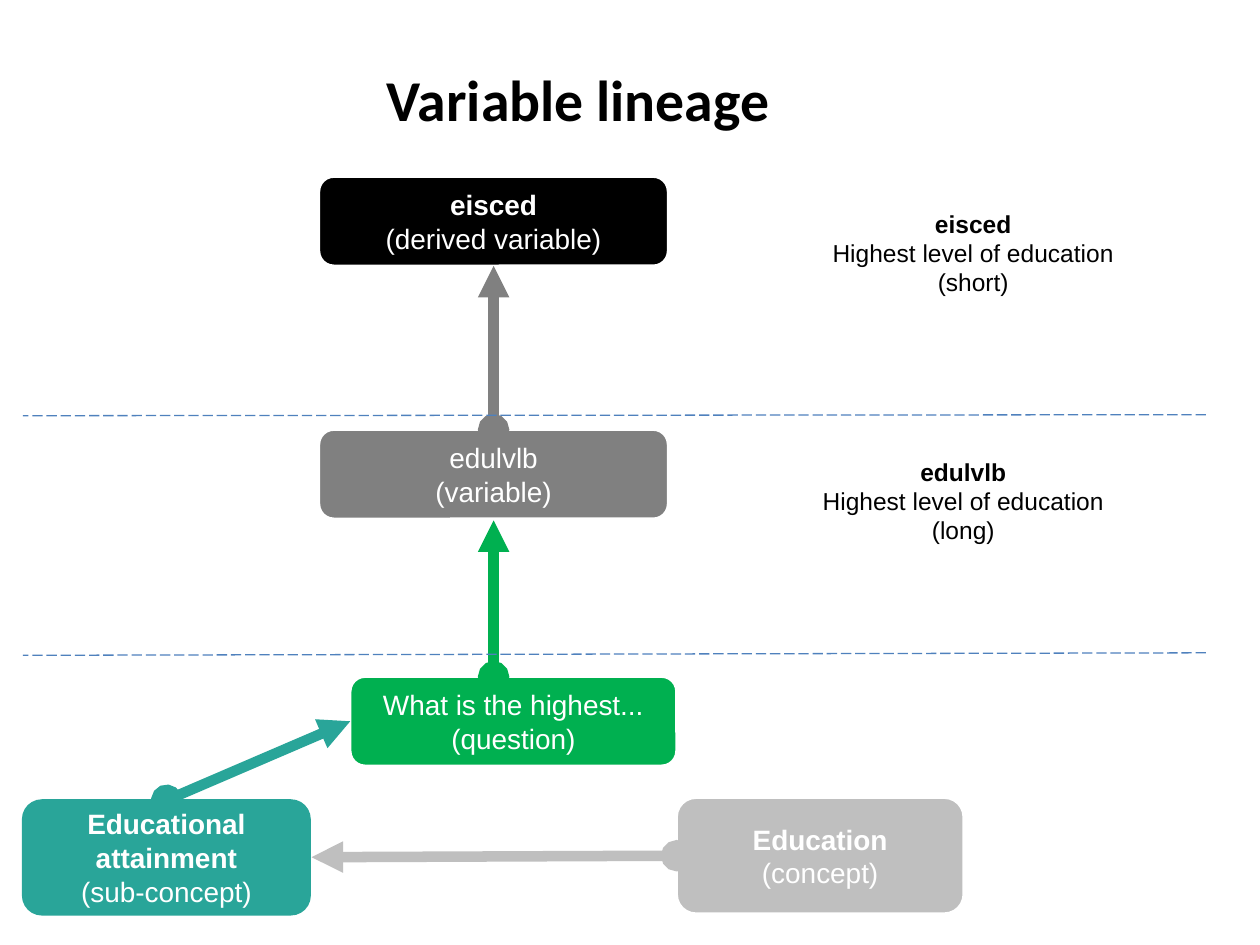
from lxml import etree
from pptx import Presentation, util as u
from pptx.dml.color import RGBColor
from pptx.enum import dml, shapes, text
from pptx.oxml.ns import qn

BLACK = RGBColor(0x00, 0x00, 0x00)
WHITE = RGBColor(0xFF, 0xFF, 0xFF)
GREEN = RGBColor(0x00, 0xB0, 0x50)
TEAL = RGBColor(0x29, 0xA5, 0x99)
GREY = RGBColor(0x80, 0x80, 0x80)
SILVER = RGBColor(0xBF, 0xBF, 0xBF)
BLUE = RGBColor(0x4F, 0x81, 0xBD)


def add_span(para, words, size=16, color=WHITE, bold=False, font="Arial"):
    span = para.add_run()
    span.text = words
    span.font.size = u.Pt(size)
    span.font.color.rgb = color
    span.font.bold = bold
    span.font.name = font


def set_frame(box):
    """Wrap and centre the text of a box, and return its first paragraph."""
    frame = box.text_frame
    frame.word_wrap = True
    frame.vertical_anchor = text.MSO_ANCHOR.MIDDLE
    para = frame.paragraphs[0]
    para.alignment = text.PP_ALIGN.CENTER
    return para


def add_title(page, left, top, width, height):
    box = page.shapes.add_textbox(u.Cm(left), u.Cm(top), u.Cm(width), u.Cm(height))
    para = set_frame(box)
    para.line_spacing = 0.9
    add_span(para, "Variable lineage", size=33, color=BLACK, bold=True, font="Calibri")


def add_node(page, left, top, width, height, name, role, fill,
             bold=False, border=WHITE, border_width=1.5):
    node = page.shapes.add_shape(shapes.MSO_SHAPE.ROUNDED_RECTANGLE,
                                 u.Cm(left), u.Cm(top), u.Cm(width), u.Cm(height))
    node.shadow.inherit = False
    node.fill.solid()
    node.fill.fore_color.rgb = fill
    node.line.color.rgb = border
    node.line.width = u.Pt(border_width)
    para = set_frame(node)
    add_span(para, name, bold=bold)
    para.add_line_break()
    add_span(para, role)


def add_line(page, start, end, color, width):
    line = page.shapes.add_connector(shapes.MSO_CONNECTOR.STRAIGHT,
                                     *[u.Cm(value) for value in (*start, *end)])
    line.line.color.rgb = color
    line.line.width = u.Pt(width)
    etree.SubElement(line._element.spPr, qn("a:effectLst"))
    return line


def add_arrow(page, start, end, color):
    outline = add_line(page, start, end, color, 6).line._get_or_add_ln()
    for tag, kind in (("a:headEnd", "oval"), ("a:tailEnd", "triangle")):
        etree.SubElement(outline, qn(tag), type=kind)


def add_note(page, left, top, name, length):
    box = page.shapes.add_textbox(u.Cm(left), u.Cm(top), u.Cm(6.78), u.Cm(3.07))
    para = set_frame(box)
    add_span(para, name, size=14, color=BLACK, bold=True)
    for words in ("Highest level of education", length):
        para = box.text_frame.add_paragraph()
        para.alignment = text.PP_ALIGN.CENTER
        add_span(para, words, size=14, color=BLACK)


def add_lineage(page, left, top):
    """Draw the chain from concept to derived variable, lower steps first."""
    def at(x, y):
        return left + x, top + y

    axis = 9.49
    add_node(page, *at(5.97, 0), 7.04, 1.8, "eisced", "(derived variable)", BLACK, bold=True)
    add_node(page, *at(6.6, 10.08), 6.58, 1.8, "What is the highest...", "(question)", GREEN)
    add_arrow(page, at(axis, 10.08), at(axis, 6.93), GREEN)
    add_arrow(page, at(2.9, 12.57), at(6.6, 10.98), TEAL)
    add_node(page, *at(5.97, 5.1), 7.04, 1.8, "edulvlb", "(variable)", GREY)
    add_node(page, *at(0, 12.57), 5.79, 2.31, "Educational attainment", "(sub-concept)",
             TEAL, bold=True, border=TEAL, border_width=1)
    add_arrow(page, at(axis, 5.1), at(axis, 1.8), GREY)
    add_node(page, *at(13.18, 12.52), 5.79, 2.34, "Education", "(concept)", SILVER, bold=True)
    add_arrow(page, at(13.18, 13.69), at(5.82, 13.72), SILVER)


def add_levels(page, left, top, width):
    """Draw the dashed level dividers and the notes beside the variables."""
    for right_y, left_y in ((4.8, 4.82), (9.6, 9.65)):
        divider = add_line(page, (left + width, top + right_y), (left, top + left_y), BLUE, 0.75)
        divider.line.dash_style = dml.MSO_LINE.LONG_DASH
    add_note(page, left + 15.57, top + 5, "edulvlb", "(long)")
    add_note(page, left + 15.77, top, "eisced", "(short)")


def main():
    deck = Presentation()
    deck.slide_width, deck.slide_height = u.Cm(25.4), u.Cm(19.05)
    page = deck.slides.add_slide(deck.slide_layouts[6])
    add_title(page, 0.66, 0.23, 22, 3.68)
    add_lineage(page, 0.46, 3.56)
    add_levels(page, 0.46, 3.56, 23.85)
    deck.save("out.pptx")


if __name__ == "__main__":
    main()
